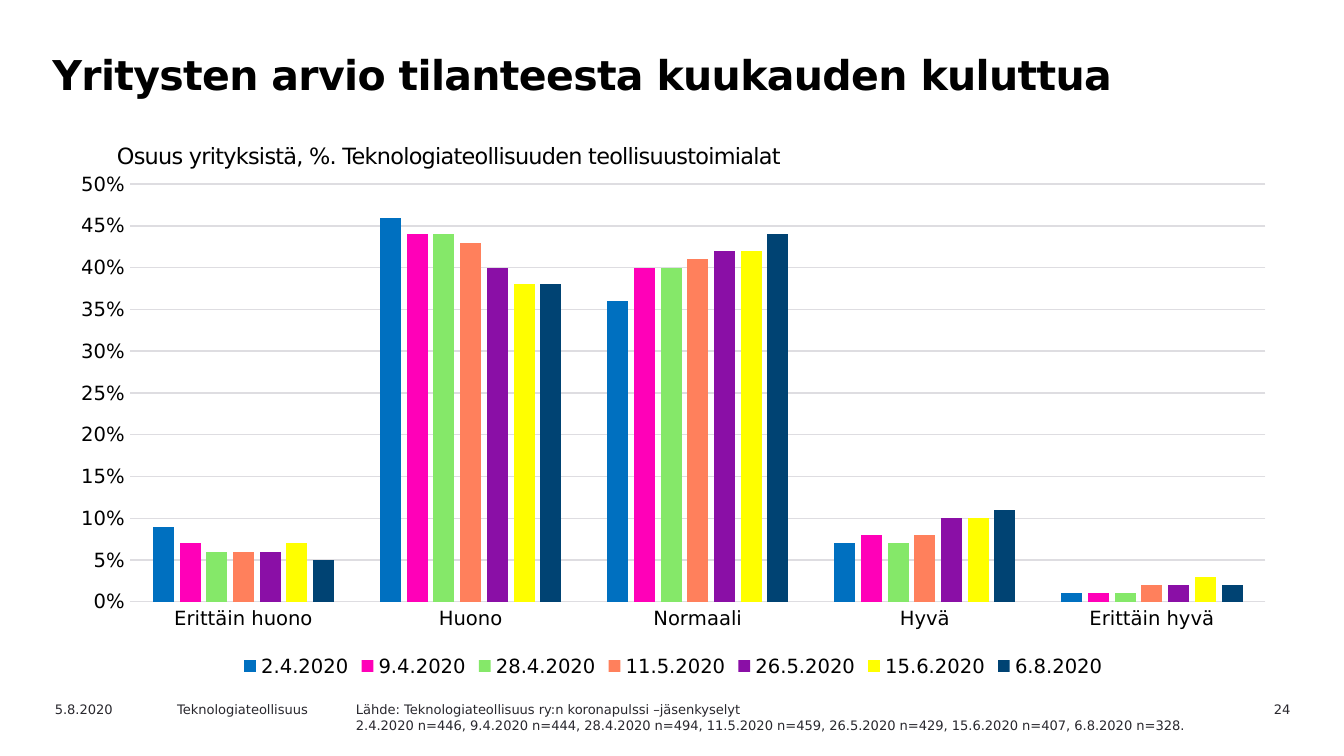
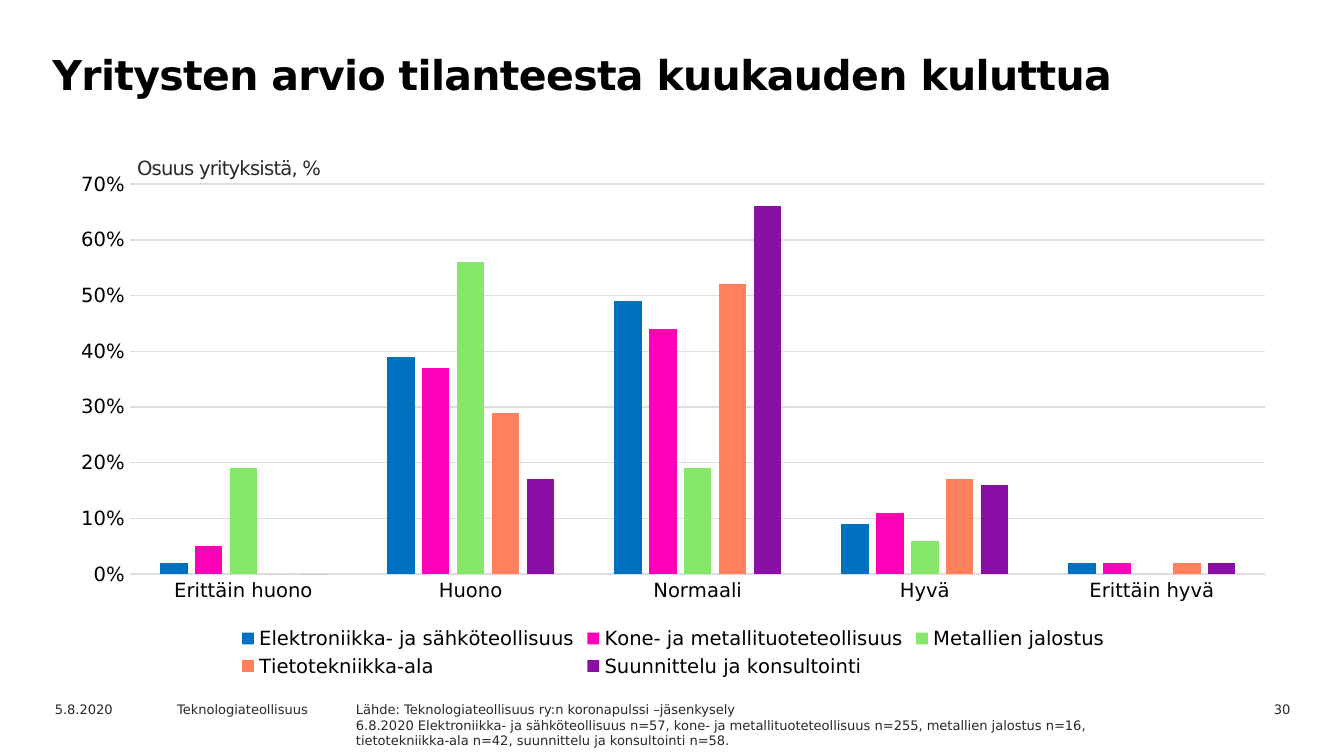
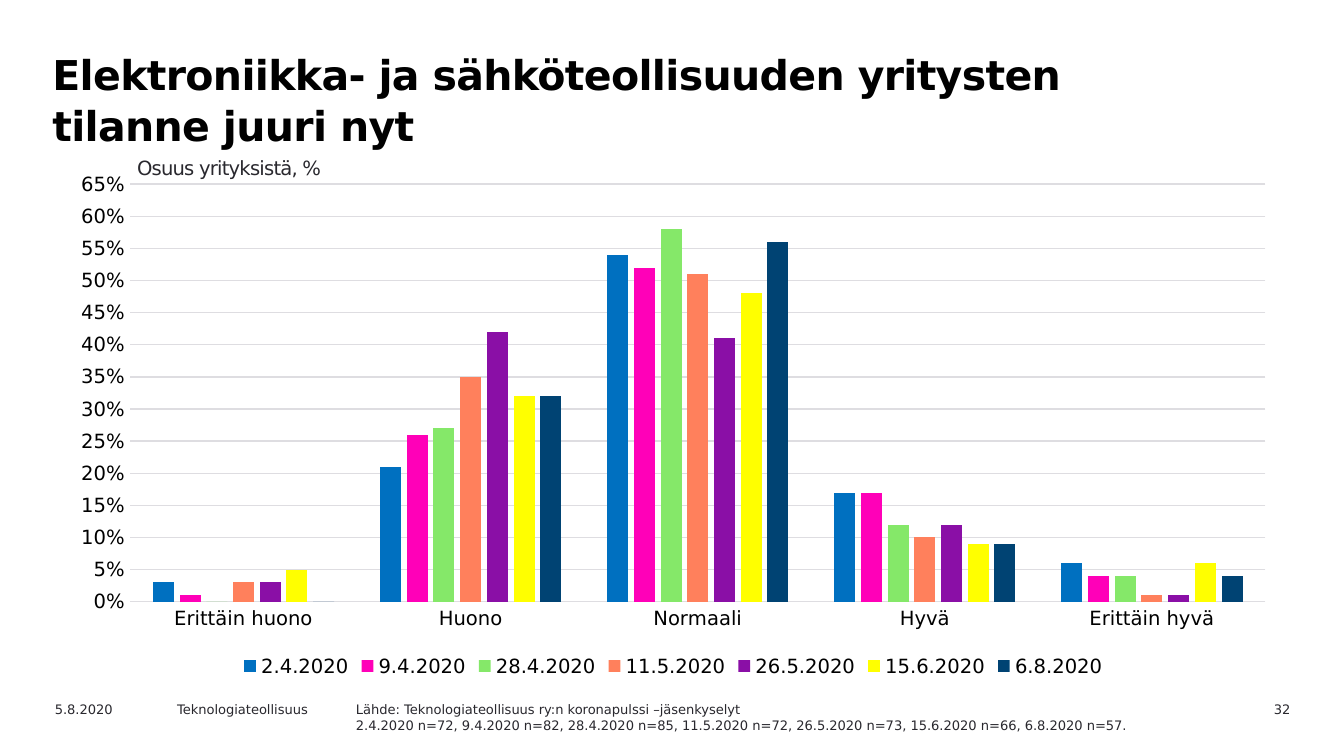
import pptx
import pptx.chart.data
import pptx.dml.color
import pptx.enum.chart
import pptx.enum.text
import pptx.util
from pptx.util import Inches

FONT = "DejaVu Sans"
COLORS = {"black": "000000", "text": "29282E", "grid": "DEDDE1"}
SERIES_COLORS = ["0070C0", "FF00B8", "85E869", "FF805C", "8A0FA6", "FFFF00", "004373"]
CATEGORIES = ["Erittäin huono", "Huono", "Normaali", "Hyvä", "Erittäin hyvä"]
DATES = ["2.4.2020", "9.4.2020", "28.4.2020", "11.5.2020", "26.5.2020", "15.6.2020", "6.8.2020"]
SECTORS = ["Elektroniikka- ja sähköteollisuus", "Kone- ja metallituoteteollisuus",
           "Metallien jalostus", "Tietotekniikka-ala", "Suunnittelu ja konsultointi"]
OUTLOOK_TITLE = "Yritysten arvio tilanteesta kuukauden kuluttua"
SHARE_LABEL = {"text": "Osuus yrityksistä, %", "at": (0.98, 1.12, 3.39, 0.26),
               "size": 10.5, "color": "text"}

slides = [
    {
        "title": OUTLOOK_TITLE,
        "number": "24",
        "label": {"text": "Osuus yrityksistä, %. Teknologiateollisuuden teollisuustoimialat",
                  "at": (0.83, 1.02, 5.83, 0.28), "size": 12, "color": "black"},
        "source": "Lähde: Teknologiateollisuus ry:n koronapulssi –jäsenkyselyt\n"
                  "2.4.2020 n=446, 9.4.2020 n=444, 28.4.2020 n=494, 11.5.2020 n=459, "
                  "26.5.2020 n=429, 15.6.2020 n=407, 6.8.2020 n=328.",
        "source_size": (6.62, 0.4),
        "axis": (0.5, 0.05),
        "names": DATES,
        "values": [
            (0.09, 0.46, 0.36, 0.07, 0.01),
            (0.07, 0.44, 0.40, 0.08, 0.01),
            (0.06, 0.44, 0.40, 0.07, 0.01),
            (0.06, 0.43, 0.41, 0.08, 0.02),
            (0.06, 0.40, 0.42, 0.10, 0.02),
            (0.07, 0.38, 0.42, 0.10, 0.03),
            (0.05, 0.38, 0.44, 0.11, 0.02),
        ],
    },
    {
        "title": OUTLOOK_TITLE,
        "number": "30",
        "label": SHARE_LABEL,
        "source": "Lähde: Teknologiateollisuus ry:n koronapulssi –jäsenkysely\n"
                  "6.8.2020 Elektroniikka- ja sähköteollisuus n=57, kone- ja "
                  "metallituoteteollisuus n=255, metallien jalostus n=16, "
                  "tietotekniikka-ala n=42, suunnittelu ja konsultointi n=58.",
        "source_size": (5.75, 0.45),
        "axis": (0.7, 0.1),
        "names": SECTORS,
        "values": [
            (0.02, 0.39, 0.49, 0.09, 0.02),
            (0.05, 0.37, 0.44, 0.11, 0.02),
            (0.19, 0.56, 0.19, 0.06, 0),
            (0, 0.29, 0.52, 0.17, 0.02),
            (0, 0.17, 0.66, 0.16, 0.02),
        ],
    },
    {
        "title": "Elektroniikka- ja sähköteollisuuden yritysten tilanne juuri nyt",
        "number": "32",
        "label": SHARE_LABEL,
        "source": "Lähde: Teknologiateollisuus ry:n koronapulssi –jäsenkyselyt\n"
                  "2.4.2020 n=72, 9.4.2020 n=82, 28.4.2020 n=85, 11.5.2020 n=72, "
                  "26.5.2020 n=73, 15.6.2020 n=66, 6.8.2020 n=57.",
        "source_size": (6.78, 0.4),
        "axis": (0.65, 0.05),
        "names": DATES,
        "values": [
            (0.03, 0.21, 0.54, 0.17, 0.06),
            (0.01, 0.26, 0.52, 0.17, 0.04),
            (0, 0.27, 0.58, 0.12, 0.04),
            (0.03, 0.35, 0.51, 0.10, 0.01),
            (0.03, 0.42, 0.41, 0.12, 0.01),
            (0.05, 0.32, 0.48, 0.09, 0.06),
            (0, 0.32, 0.56, 0.09, 0.04),
        ],
    },
]


def style_font(font, size, color, bold=False):
    font.name = FONT
    font.size = pptx.util.Pt(size)
    font.bold = bold
    font.color.rgb = pptx.dml.color.RGBColor.from_string(COLORS[color])


def write(sp, text, at, size, color="text", bold=False, spacing=0):
    """Place a text shape, fill it and format its runs; spacing is in points."""
    sp.left, sp.top, sp.width, sp.height = map(Inches, at)
    tf = sp.text_frame
    tf.text = text
    tf.word_wrap = True
    tf.auto_size = pptx.enum.text.MSO_AUTO_SIZE.NONE
    tf.vertical_anchor = pptx.enum.text.MSO_ANCHOR.TOP
    for p in tf.paragraphs:
        p.alignment = pptx.enum.text.PP_ALIGN.LEFT
        for r in p.runs:
            style_font(r.font, size, color, bold)
            if spacing:
                r.font._element.set("spc", str(round(spacing * 100)))
    return tf


prs = pptx.Presentation()
prs.slide_width = Inches(10)
prs.slide_height = prs.slide_width * 9 // 16
grid_color = pptx.dml.color.RGBColor.from_string(COLORS["grid"])

for content in slides:
    s = prs.slides.add_slide(prs.slide_layouts[5])
    tf = write(s.shapes.title, content["title"], (0.28, 0.31, 8.74, 0.71), 22, "black", True, -0.35)
    tf.margin_left = Inches(0.11)
    tf.paragraphs[0].line_spacing = pptx.util.Pt(27)

    # Footer
    footer = [
        ("5.8.2020", (0.31, 5.17, 1, 0.18)),
        ("Teknologiateollisuus", (1.22, 5.17, 1.42, 0.18)),
        (content["source"], (2.55, 5.17, *content["source_size"])),
        (content["number"], (8.76, 5.17, 0.94, 0.18)),
    ]
    for text, at in footer:
        tf = write(s.shapes.add_textbox(0, 0, 0, 0), text, at, 7)
    tf.paragraphs[0].alignment = pptx.enum.text.PP_ALIGN.RIGHT

    # Chart
    data = pptx.chart.data.CategoryChartData(number_format="0%")
    data.categories = CATEGORIES
    for name, values in zip(content["names"], content["values"]):
        data.add_series(name, values)
    chart = s.shapes.add_chart(
        pptx.enum.chart.XL_CHART_TYPE.COLUMN_CLUSTERED,
        Inches(0.42), Inches(1.21), Inches(9.18), Inches(3.87), data).chart
    style_font(chart.font, 10, "text")
    chart.has_title = False
    chart.has_legend = True
    chart.legend.position = pptx.enum.chart.XL_LEGEND_POSITION.BOTTOM
    chart.legend.include_in_layout = False
    style_font(chart.legend.font, 10.5, "black")

    plot = chart.plots[0]
    plot.gap_width, plot.overlap = 219, -27
    plot.vary_by_categories = False
    for series, color in zip(plot.series, SERIES_COLORS):
        series.format.fill.solid()
        series.format.fill.fore_color.rgb = pptx.dml.color.RGBColor.from_string(color)

    value_axis, category_axis = chart.value_axis, chart.category_axis
    for axis in (value_axis, category_axis):
        axis.major_tick_mark = axis.minor_tick_mark = pptx.enum.chart.XL_TICK_MARK.NONE
        style_font(axis.tick_labels.font, 10.5, "black")
    value_axis.minimum_scale = 0
    value_axis.maximum_scale, value_axis.major_unit = content["axis"]
    value_axis.tick_labels.number_format = "0%"
    value_axis.tick_labels.number_format_is_linked = False
    value_axis.format.line.fill.background()
    for line in (value_axis.major_gridlines.format.line, category_axis.format.line):
        line.color.rgb = grid_color
        line.width = pptx.util.Pt(0.75)

    label = content["label"]
    tf = write(s.shapes.add_textbox(0, 0, 0, 0), label["text"], label["at"],
               label["size"], label["color"], spacing=-0.4)
    tf.margin_left = tf.margin_top = tf.margin_right = tf.margin_bottom = Inches(0.04)

prs.save("out.pptx")
